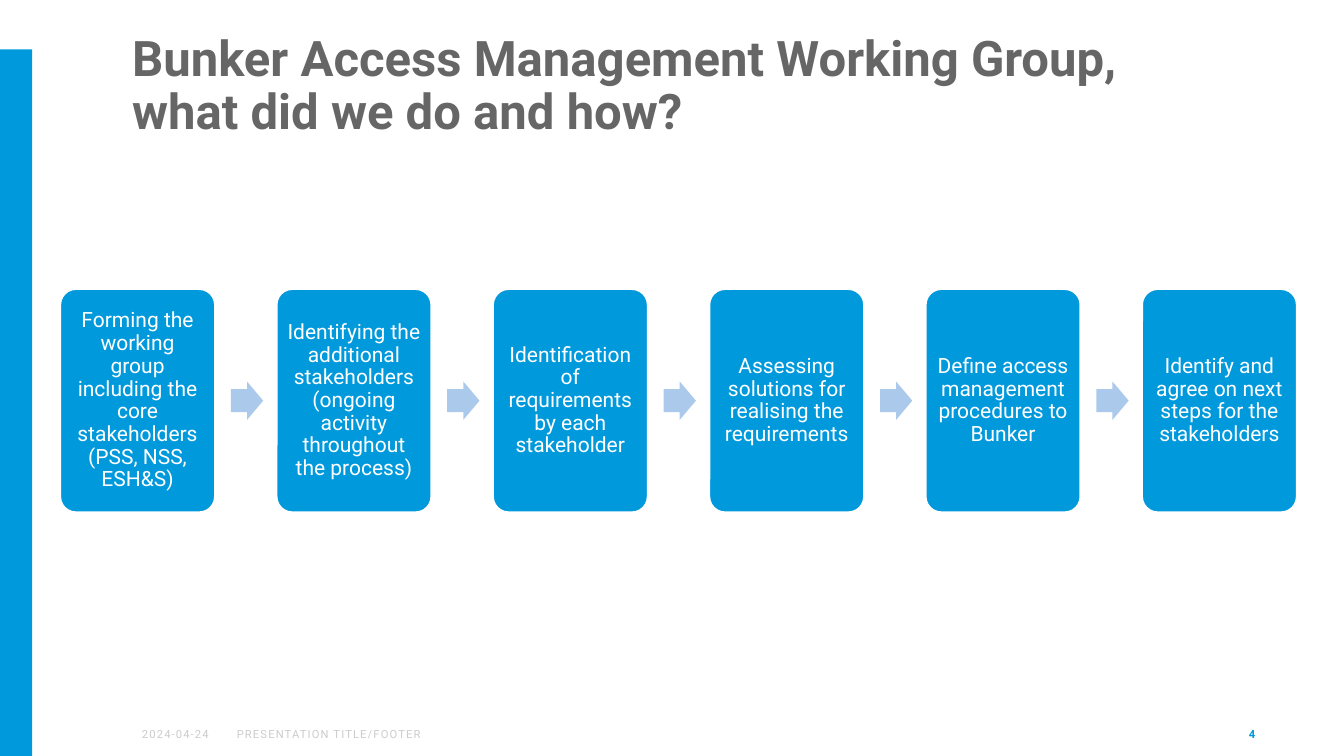
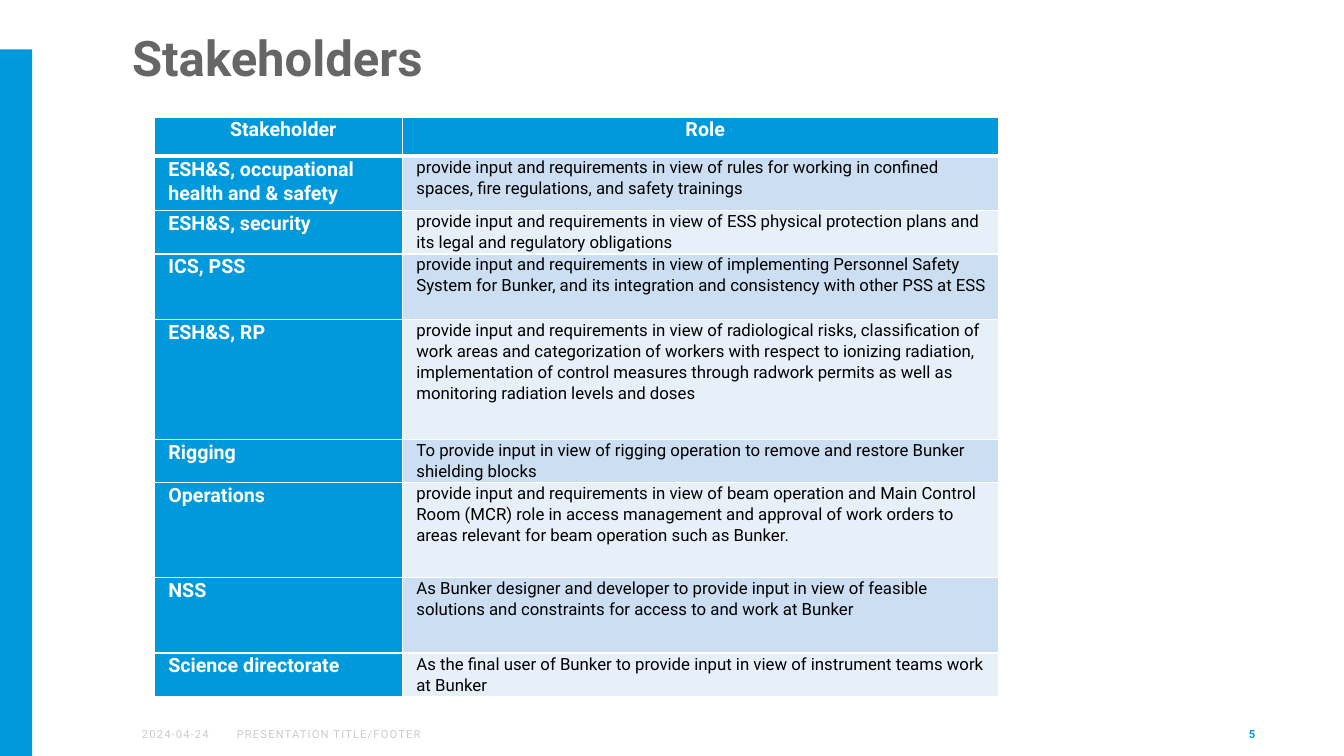
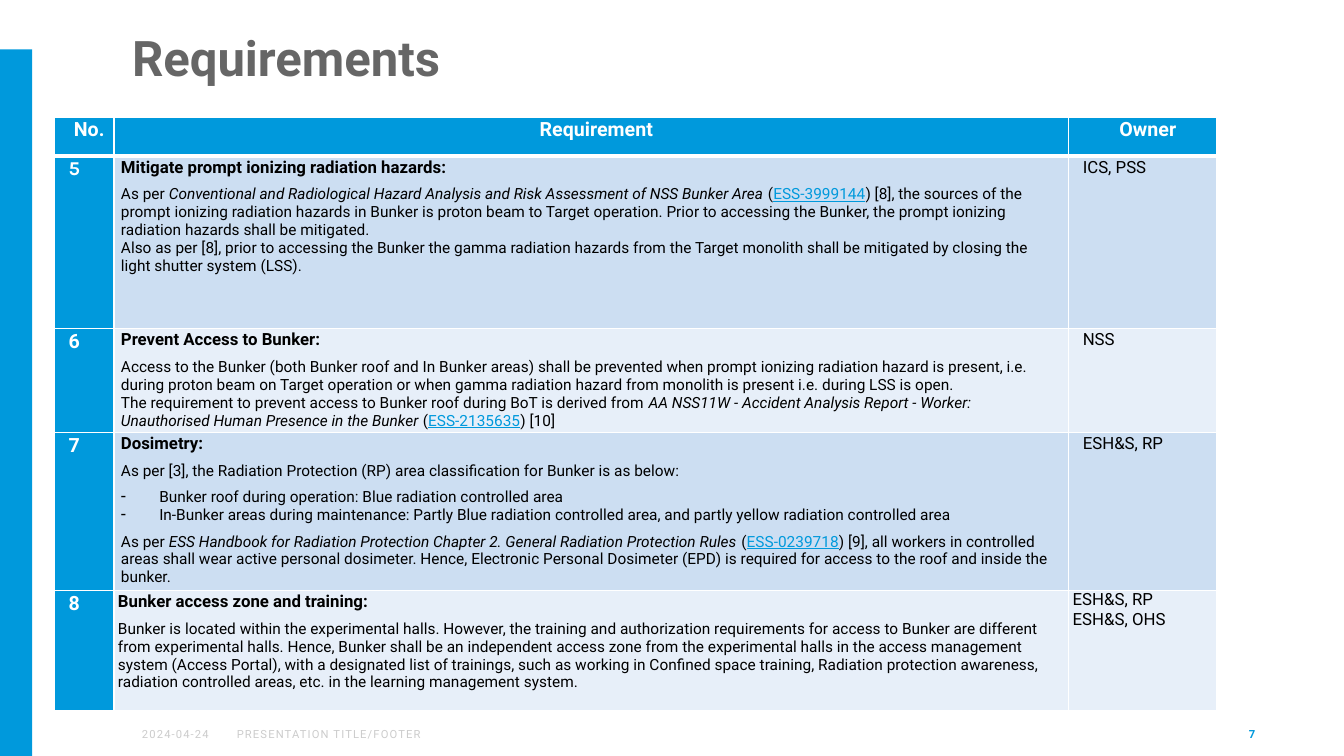
from itertools import cycle
from lxml.etree import SubElement
from pptx import Presentation
from pptx.dml.color import RGBColor
from pptx.enum.shapes import MSO_SHAPE as Shape
from pptx.enum.text import MSO_ANCHOR as Anchor, MSO_AUTO_SIZE as AutoSize, PP_ALIGN as Align
from pptx.oxml.ns import qn
from pptx.util import Inches, Pt

COLORS = {
    "blue": "0099DC", "arrow": "ABCAEB", "title": "666666", "footer": "CCCCCC",
    "band_dark": "CCDEF2", "band_light": "E7EFF9", "white": "FFFFFF", "black": "000000",
}
FONT = "Roboto"

# Text styles: size, colour and font attributes
TITLE = {"size": Pt(35), "color": "title", "bold": True}
FOOTER = {"size": Pt(8), "color": "footer", "bold": False}
PAGE = {"size": Pt(8), "color": "blue", "bold": True}
CARD = {"size": Pt(15), "color": "white", "bold": False}
HEAD = {"size": Pt(14), "color": "white", "bold": True}
BODY = {"size": Pt(12), "color": "black", "bold": False}
LEAD = BODY | {"bold": True}
DETAIL = BODY | {"size": Pt(11)}
ITALIC = {"italic": True}
LINK = {"color": "blue", "underline": True}

# Paragraph styles
CELL = {"line_spacing": 1.07, "space_after": Pt(8), "indent": 0.1}
HEAD_CELL = CELL | {"alignment": Align.CENTER}
LEAD_PAR = {"line_spacing": 1.07, "space_after": Pt(6)}
SPACED = {"space_after": Pt(6)}
DASH = {"indent": 0.38, "bullet": "-"}


def rgb(name):
    return RGBColor.from_string(COLORS[name])


def style_font(font, style):
    for key, value in ({"name": FONT} | style).items():
        if key == "color":
            font.color.rgb = rgb(value)
        else:
            setattr(font, key, value)


def write(frame, paragraphs):
    """Each paragraph is (text or list of (text, extra style), font style, paragraph style)."""
    for index, (content, font_style, layout) in enumerate(paragraphs):
        paragraph = frame.paragraphs[0] if index == 0 else frame.add_paragraph()
        props = paragraph._p.get_or_add_pPr()
        for key, value in layout.items():
            if key == "indent":
                props.set("marL", str(Inches(value)))
            elif key == "bullet":
                props.set("indent", "-" + props.get("marL"))
                SubElement(props, qn("a:buChar")).set("char", value)
            else:
                setattr(paragraph, key, value)
        pieces = [(content, {})] if isinstance(content, str) else content
        for text, extra in pieces:
            run = paragraph.add_run()
            run.text = text
            style_font(run.font, font_style | extra)


def set_margins(target, left, top, right, bottom):
    margins = {"left": left, "top": top, "right": right, "bottom": bottom}
    for side, value in margins.items():
        setattr(target, f"margin_{side}", Inches(value))


def add_block(slide, kind, box, fill):
    block = slide.shapes.add_shape(kind, *map(Inches, box))
    block.shadow.inherit = False
    block.fill.solid()
    block.fill.fore_color.rgb = rgb(fill)
    block.line.fill.background()
    return block


# Frame shared by all slides: side bar, title, footer
def add_frame(prs, title, page):
    slide = prs.slides.add_slide(prs.slide_layouts[5])
    add_block(slide, Shape.RECTANGLE, (0, 0.49, 0.32, 7.01), "blue")

    heading = slide.shapes.title
    place = {"left": 1.21, "top": 0.29, "width": 10.24, "height": 0.72}
    for side, value in place.items():
        setattr(heading, side, Inches(value))
    frame = heading.text_frame
    frame.word_wrap, frame.auto_size = True, AutoSize.NONE
    frame.vertical_anchor = Anchor.TOP
    set_margins(frame, 0.1, 0.05, 0.1, 0.02)
    write(frame, [(title, TITLE, {"line_spacing": 0.9, "alignment": Align.LEFT})])

    footers = [
        (1.31, 0.91, "2024-04-24", FOOTER, Align.LEFT),
        (2.25, 4.72, "PRESENTATION TITLE/FOOTER", FOOTER, Align.LEFT),
        (9.55, 3, page, PAGE, Align.RIGHT),
    ]
    for left, width, text, font_style, alignment in footers:
        box = slide.shapes.add_textbox(*map(Inches, (left, 7.08, width, 0.4)))
        box.text_frame.word_wrap = True
        box.text_frame.vertical_anchor = Anchor.MIDDLE
        write(box.text_frame, [(text, font_style, {"alignment": alignment})])
        if font_style is FOOTER:
            box.text_frame.paragraphs[0].runs[0].font._element.set("spc", "80")
    return slide


# Row of cards joined by arrows, filling the box
def add_process(slide, box, steps):
    left, top, width, height = box
    card_width, arrow_width, arrow_height = 1.53, 0.32, 0.38
    pitch = (width - card_width) / (len(steps) - 1)
    for index, step in enumerate(steps):
        x = left + index * pitch
        card = add_block(slide, Shape.ROUNDED_RECTANGLE, (x, top, card_width, height), "blue")
        card.adjustments[0] = 0.1
        card.line.color.rgb = rgb("white")
        card.line.width = Pt(1)
        frame = card.text_frame
        frame.word_wrap, frame.vertical_anchor = True, Anchor.MIDDLE
        set_margins(frame, 0.06, 0.06, 0.06, 0.06)
        write(frame, [(step, CARD, {"line_spacing": 0.9, "alignment": Align.CENTER})])
        if index < len(steps) - 1:
            arrow_box = (x + card_width + 0.16, top + (height - arrow_height) / 2,
                         arrow_width, arrow_height)
            arrow = add_block(slide, Shape.RIGHT_ARROW, arrow_box, "arrow")
            arrow.adjustments[0], arrow.adjustments[1] = 0.6, 0.5


def fill_cell(cell, paragraphs, fill, inset, bottom=1, top=1):
    props = cell._tc.get_or_add_tcPr()
    for side, width in {"L": 1, "R": 1, "T": top, "B": bottom}.items():
        line = SubElement(props, qn(f"a:ln{side}"), w=str(Pt(width)))
        paint = SubElement(line, qn("a:solidFill"))
        SubElement(paint, qn("a:srgbClr"), val=COLORS["white"])
    cell.fill.solid()
    cell.fill.fore_color.rgb = rgb(fill)
    set_margins(cell, inset, 0, inset, 0)
    write(cell.text_frame, paragraphs)


# Table with blue header row and first column, and banded body
def add_grid(slide, left, top, widths, heights, headers, rows):
    """Each row is a list of (paragraphs, inset), one for each column."""
    box = map(Inches, (left, top, sum(widths), sum(heights)))
    table = slide.shapes.add_table(len(heights), len(widths), *box).table
    table.horz_banding = False
    for column, width in zip(table.columns, widths):
        column.width = Inches(width)
    for row, height in zip(table.rows, heights):
        row.height = Inches(height)
    for column, header in enumerate(headers):
        fill_cell(table.cell(0, column), [(header, HEAD, HEAD_CELL)], "blue", 0.04, bottom=3)
    bands = cycle(["band_dark", "band_light"])
    for number, (cells, band) in enumerate(zip(rows, bands), start=1):
        for column, (paragraphs, inset) in enumerate(cells):
            fill = band if column else "blue"
            fill_cell(table.cell(number, column), paragraphs, fill, inset,
                      top=3 if number == 1 else 1)


STEPS = [
    "Forming the working group including the core stakeholders (PSS, NSS, ESH&S)",
    "Identifying the additional stakeholders (ongoing activity throughout the process)",
    "Identification of requirements by each stakeholder",
    "Assessing solutions for realising the requirements",
    "Define access management procedures to Bunker",
    "Identify and agree on next steps for the stakeholders",
]

# Stakeholder, role, row height
STAKEHOLDERS = [
    ("ESH&S, occupational health and & safety",
     "provide input and requirements in view of rules for working in confined spaces, "
     "fire regulations, and safety trainings", 0.54),
    ("ESH&S, security",
     "provide input and requirements in view of ESS physical protection plans and its "
     "legal and regulatory obligations", 0.43),
    ("ICS, PSS",
     "provide input and requirements in view of implementing Personnel Safety System for "
     "Bunker, and its integration and consistency with other PSS at ESS", 0.65),
    ("ESH&S, RP",
     "provide input and requirements in view of radiological risks, classification of work "
     "areas and categorization of workers with respect to ionizing radiation, implementation "
     "of control measures through radwork permits as well as monitoring radiation levels "
     "and doses", 1.19),
    ("Rigging",
     "To provide input in view of rigging operation to remove and restore Bunker shielding "
     "blocks", 0.43),
    ("Operations",
     "provide input and requirements in view of beam operation and Main Control Room (MCR) "
     "role in access management and approval of work orders to areas relevant for beam "
     "operation such as Bunker.", 0.94),
    ("NSS",
     "As Bunker designer and developer to provide input in view of feasible solutions and "
     "constraints for access to and work at Bunker", 0.75),
    ("Science directorate",
     "As the final user of Bunker to provide input in view of instrument teams work at "
     "Bunker", 0.43),
]

# Number, number font, heading, detail paragraphs, owner paragraphs, text inset, row height
REQUIREMENTS = [
    ("5", {"name": "Karla"}, "Mitigate prompt ionizing radiation hazards:", [
        ([("As per ", {}),
          ("Conventional and Radiological Hazard Analysis and Risk Assessment of NSS Bunker Area",
           ITALIC),
          (" (", {}), ("ESS-3999144", LINK),
          (") [8], the sources of the prompt ionizing radiation hazards in Bunker is proton "
           "beam to Target operation. Prior to accessing the Bunker, the prompt ionizing "
           "radiation hazards shall be mitigated.", {})], DETAIL, {}),
        ("Also as per [8], prior to accessing the Bunker the gamma radiation hazards from the "
         "Target monolith shall be mitigated by closing the light shutter system (LSS).",
         DETAIL, {}),
    ], [("ICS, PSS", BODY, CELL)], 0.07, 1.71),
    ("6", {}, "Prevent Access to Bunker:", [
        ("Access to the Bunker (both Bunker roof and In Bunker areas) shall be prevented when "
         "prompt ionizing radiation hazard is present, i.e. during proton beam on Target "
         "operation or when gamma radiation hazard from monolith is present i.e. during LSS "
         "is open.", DETAIL, {}),
        ([("The requirement to prevent access to Bunker roof during BoT is derived from ", {}),
          ("AA NSS11W - Accident Analysis Report - Worker: Unauthorised Human Presence in the "
           "Bunker", ITALIC),
          (" (", {}), ("ESS-2135635", LINK), (") [10]", {})], DETAIL, {}),
    ], [("NSS", BODY, CELL)], 0.07, 1.01),
    ("7", {}, "Dosimetry:", [
        ("As per [3], the Radiation Protection (RP) area classification for Bunker is as below:",
         DETAIL, SPACED),
        ("Bunker roof during operation: Blue radiation controlled area", DETAIL, DASH),
        ("In-Bunker areas during maintenance: Partly Blue radiation controlled area, and partly "
         "yellow radiation controlled area", DETAIL, DASH | SPACED),
        ([("As per ", {}),
          ("ESS Handbook for Radiation Protection Chapter 2. General Radiation Protection Rules",
           ITALIC),
          (" (", {}), ("ESS-0239718", LINK),
          (") [9], all workers in controlled areas shall wear active personal dosimeter. Hence, "
           "Electronic Personal Dosimeter (EPD) is required for access to the roof and inside "
           "the bunker.", {})], DETAIL, SPACED),
    ], [("ESH&S, RP", BODY, CELL)], 0.07, 1.53),
    ("8", {}, "Bunker access zone and training:", [
        ("Bunker is located within the experimental halls. However, the training and "
         "authorization requirements for access to Bunker are different from experimental "
         "halls. Hence, Bunker shall be an independent access zone from the experimental halls "
         "in the access management system (Access Portal), with a designated list of trainings, "
         "such as working in Confined space training, Radiation protection awareness, radiation "
         "controlled areas, etc. in the learning management system.", DETAIL, {}),
    ], [("ESH&S, RP", BODY, {}), ("ESH&S, OHS", BODY, {})], 0.04, 1.19),
]


def add_stakeholders(slide, left, top):
    rows = [[([(name, HEAD, CELL)], 0.04), ([(role, BODY, CELL)], 0.04)]
            for name, role, _ in STAKEHOLDERS]
    heights = [0.39] + [entry[-1] for entry in STAKEHOLDERS]
    add_grid(slide, left, top, [2.46, 5.91], heights, ["Stakeholder", "Role"], rows)


def add_requirements(slide, left, top):
    rows = [[([(number, HEAD | face, CELL)], 0.04),
             ([(heading, LEAD, LEAD_PAR)] + details, inset),
             (owners, 0.04)]
            for number, face, heading, details, owners, inset, _ in REQUIREMENTS]
    heights = [0.39] + [entry[-1] for entry in REQUIREMENTS]
    add_grid(slide, left, top, [0.59, 9.47, 1.47], heights,
             ["No.", "Requirement", "Owner"], rows)


def main():
    prs = Presentation()
    prs.slide_width, prs.slide_height = Inches(13.33), Inches(7.5)
    process = add_frame(prs, "Bunker Access Management Working Group, what did we do and how?", "4")
    add_process(process, (0.6, 2.87, 12.26, 2.21), STEPS)
    add_stakeholders(add_frame(prs, "Stakeholders", "5"), 1.53, 1.16)
    add_requirements(add_frame(prs, "Requirements", "7"), 0.54, 1.16)
    prs.save("out.pptx")


if __name__ == "__main__":
    main()
